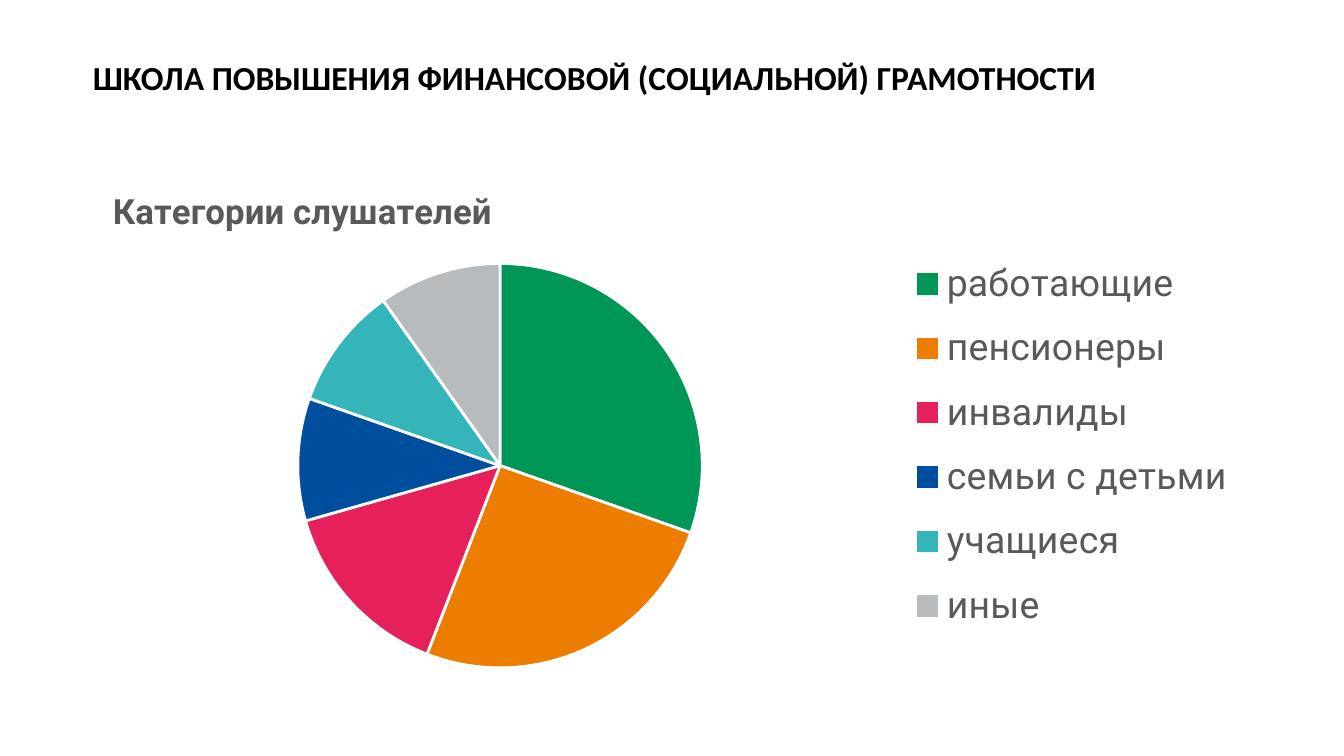
from pptx import Presentation
from pptx.chart.data import CategoryChartData
from pptx.dml.color import RGBColor
from pptx.enum import chart as ch, text as tx
from pptx.oxml import parse_xml
from pptx.oxml.ns import nsdecls
from pptx.util import Inches, Pt

# Content
HEAD = "ШКОЛА ПОВЫШЕНИЯ ФИНАНСОВОЙ (СОЦИАЛЬНОЙ) ГРАМОТНОСТИ"
TITLE = "Категории слушателей"
GROUPS = [
    ("работающие", 31, "009655"),
    ("пенсионеры", 26, "ED7D00"),
    ("инвалиды", 15, "E5205A"),
    ("семьи с детьми", 10, "004E9E"),
    ("учащиеся", 10, "33B5BA"),
    ("иные", 10, "B7BBBE"),
]
GREY = "595959"
BOX = (0.69, 1.29, 8.61, 3.81)  # chart frame
PIE = (2.21, 1.96, 3.01, 3.01)
KEY = (6.69, 1.8, 2.57, 3.02)
LABEL = (0.79, 1.35)


def style(font, name, size, color, bold=False):
    font.name, font.size, font.bold = name, Pt(size), bold
    font.color.rgb = RGBColor.from_string(color)


def place(part, area, inner=False):
    """Fix a chart part at slide inches, as fractions of the frame."""
    x, y, *size = area
    spots = [("x", (x - BOX[0]) / BOX[2]), ("y", (y - BOX[1]) / BOX[3])]
    spots += [(k, v / full) for k, v, full in zip("wh", size, BOX[2:])]
    body = '<c:layoutTarget val="inner"/>' if inner else ""
    body += '<c:xMode val="edge"/><c:yMode val="edge"/>'
    body += "".join(f'<c:{k} val="{v:.3f}"/>' for k, v in spots)
    for old in part.findall("{*}layout"):
        part.remove(old)
    new = parse_xml(f'<c:layout {nsdecls("c")}><c:manualLayout>{body}'
                    '</c:manualLayout></c:layout>')
    # The layout follows the text of a title or the position of a legend
    lead = [n for n in part if n.tag.endswith(("}tx", "}legendPos"))]
    part.insert(len(lead), new)


# A 16:9 slide
deck = Presentation()
deck.slide_width = Inches(10)
deck.slide_height = Inches(10 * 9 / 16)
slide = deck.slides.add_slide(deck.slide_layouts[5])

# Heading
head = slide.shapes.title
head.left, head.top, head.width, head.height = map(
    Inches, (0.69, 0.42, 7.53, 0.75))
frame = head.text_frame
frame.text = HEAD
frame.word_wrap = True
frame.auto_size = tx.MSO_AUTO_SIZE.NONE
frame.vertical_anchor = tx.MSO_ANCHOR.TOP
frame.margin_left = frame.margin_right = 0
frame.margin_top = frame.margin_bottom = 0
para = frame.paragraphs[0]
para.alignment = tx.PP_ALIGN.LEFT
style(para.runs[0].font, "Calibri", 18, "000000", True)

# Pie chart
names, vals, colors = zip(*GROUPS)
data = CategoryChartData()
data.categories = names
data.add_series("Series 1", vals)
chart = slide.shapes.add_chart(
    ch.XL_CHART_TYPE.PIE, *map(Inches, BOX), data).chart
style(chart.font, "Roboto", 10, "000000")
plot = chart.plots[0]
plot.vary_by_categories = True
for i, color in enumerate(colors):
    form = plot.series[0].points[i].format
    form.fill.solid()
    form.fill.fore_color.rgb = RGBColor.from_string(color)
    form.line.color.rgb = RGBColor.from_string("FFFFFF")
    form.line.width = Pt(1.5)

# Chart title and legend
label = chart.chart_title
label.text_frame.text = TITLE
style(label.text_frame.paragraphs[0].runs[0].font, "Roboto", 18.6, GREY, True)
label.include_in_layout = False
chart.has_legend = True
key = chart.legend
key.position = ch.XL_LEGEND_POSITION.RIGHT
key.include_in_layout = False
style(key.font, "Roboto", 20, GREY)

# Positions of the chart parts
place(chart.element.find(".//{*}plotArea"), PIE, inner=True)
place(chart.element.find(".//{*}legend"), KEY)
place(chart.element.find(".//{*}title"), LABEL)

deck.save("out.pptx")
